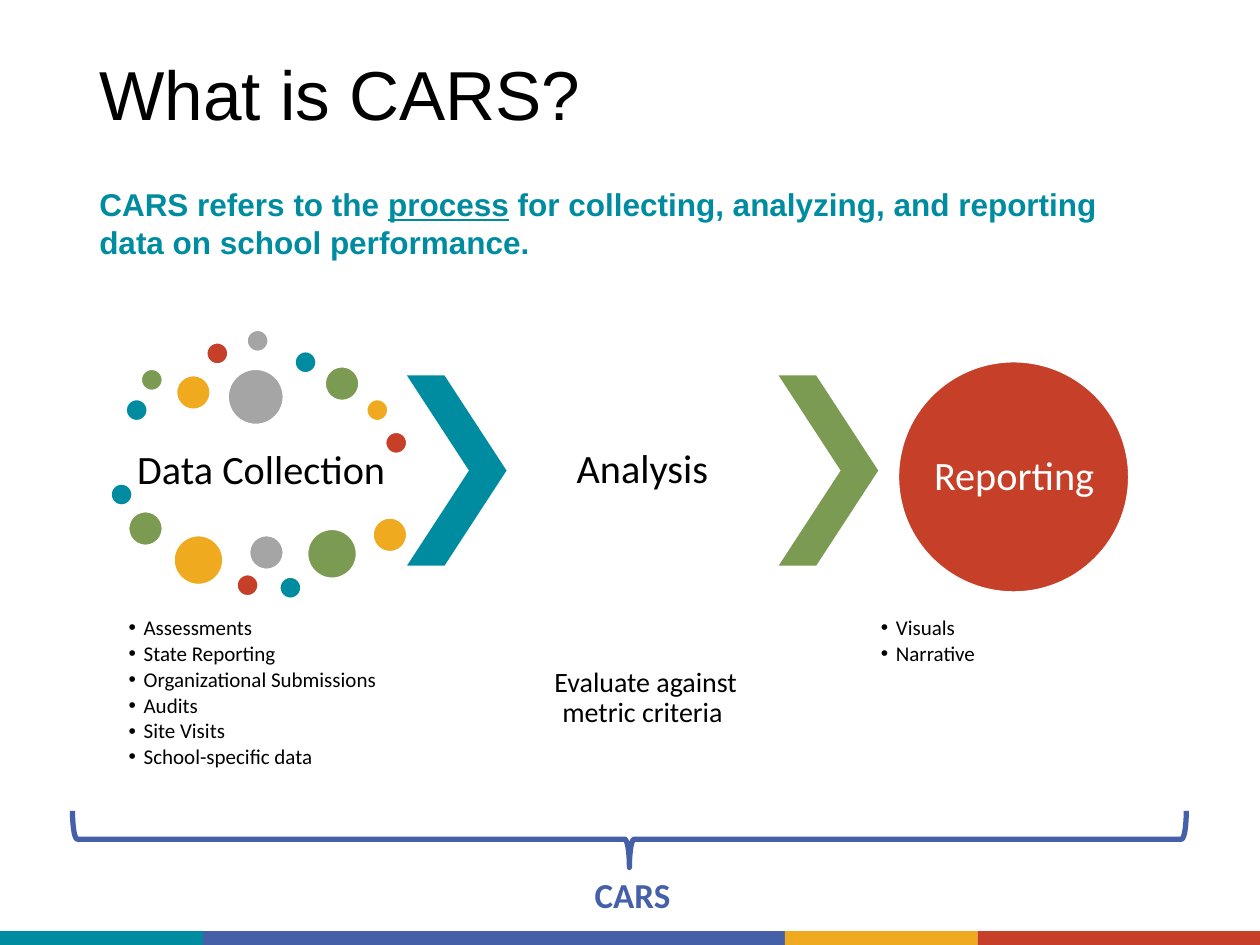
from lxml import etree
from pptx import Presentation
from pptx import util as u
from pptx.dml.color import RGBColor
from pptx.enum import shapes, text
from pptx.oxml import ns

TEAL, BLUE, GOLD, RED = "008CA0", "455FA9", "EFAA1F", "C63F28"
GREEN, GRAY, BLACK, WHITE = "7C9B52", "A5A5A5", "000000", "FFFFFF"
SHAPE, ALIGN, ANCHOR = shapes.MSO_SHAPE, text.PP_ALIGN, text.MSO_ANCHOR


def rgb(value):
    return RGBColor.from_string(value)


def apply(target, values):
    for name, value in values.items():
        setattr(target, name, value)


class SlideBuilder:
    """Hold the shared style and the current slide, and draw each kind of element."""

    centered = {"alignment": ALIGN.CENTER, "line_spacing": 0.9}
    listed = {"level": 1, "alignment": ALIGN.LEFT, "line_spacing": 0.9,
              "space_before": u.Pt(0), "space_after": u.Pt(1.8)}

    def __init__(self, slide):
        self.slide = slide

    def place(self, shape, box):
        names = ("left", "top", "width", "height")
        apply(shape, dict(zip(names, map(u.Inches, box))))

    def frame(self, shape, inset, anchor):
        frame = shape.text_frame
        margins = ("margin_left", "margin_top", "margin_right", "margin_bottom")
        values = dict(zip(margins, map(u.Inches, inset)))
        apply(frame, values | {"word_wrap": True, "vertical_anchor": anchor,
                               "auto_size": text.MSO_AUTO_SIZE.NONE})
        return frame

    def run(self, paragraph, content, size, color, font="Calibri", **values):
        run = paragraph.add_run()
        run.text = content
        apply(run.font, {"name": font, "size": u.Pt(size)} | values)
        run.font.color.rgb = rgb(color)

    def shape(self, kind, box, fill=None, line=None, line_width=1):
        shape = self.slide.shapes.add_shape(kind, *map(u.Inches, box))
        shape.shadow.inherit = False
        if fill:
            shape.fill.solid()
            shape.fill.fore_color.rgb = rgb(fill)
        else:
            shape.fill.background()
        if line:
            shape.line.color.rgb = rgb(line)
            shape.line.width = u.Pt(line_width)
        else:
            shape.line.fill.background()
        return shape

    def title(self, content, box):
        shape = self.slide.shapes.title
        self.place(shape, box)
        paragraph = self.frame(shape, (0.1, 0.05, 0.1, 0.05), ANCHOR.MIDDLE).paragraphs[0]
        apply(paragraph, {"alignment": ALIGN.LEFT, "line_spacing": 0.9})
        self.run(paragraph, content, 39.6, BLACK, "Arial")

    def bullets(self, index, items, box):
        shape = self.slide.placeholders[index]
        self.place(shape, box)
        frame = self.frame(shape, (0.02,) * 4, ANCHOR.TOP)
        for number, item in enumerate(items):
            paragraph = frame.add_paragraph() if number else frame.paragraphs[0]
            apply(paragraph, self.listed)
            properties = paragraph._p.get_or_add_pPr()
            properties.set("marL", str(u.Inches(0.12)))
            properties.set("indent", str(u.Inches(-0.12)))
            color = etree.SubElement(properties, ns.qn("a:buClr"))
            etree.SubElement(color, ns.qn("a:srgbClr"), val=BLACK)
            etree.SubElement(properties, ns.qn("a:buFont"), typeface="Arial")
            etree.SubElement(properties, ns.qn("a:buChar"), char="•")
            self.run(paragraph, item, 12, BLACK)

    def textbox(self, box, runs, size, color, inset=(0.1, 0.05, 0.1, 0.05),
                anchor=ANCHOR.TOP, layout=None, **font):
        shape = self.slide.shapes.add_textbox(*map(u.Inches, box))
        paragraph = self.frame(shape, inset, anchor).paragraphs[0]
        apply(paragraph, layout or {})
        for content, values in runs:
            self.run(paragraph, content, size, color, **(font | values))

    def label(self, content, box, size=23, color=BLACK, inset=0.03):
        self.textbox(box, [(content, {})], size, color, (inset,) * 4,
                     ANCHOR.MIDDLE, self.centered)

    def chevron(self, left, fill):
        chevron = self.shape(SHAPE.CHEVRON, (left, 2.98, 0.79, 1.51), fill)
        chevron.adjustments[0] = 0.623

    def circle(self, left, top, size, fill):
        self.shape(SHAPE.OVAL, (left, top, size, size), fill, WHITE)


SMALL, MEDIUM, LARGE, LARGEST = 0.17, 0.27, 0.39, 0.44
DOTS = [
    (1, 3.17, SMALL, TEAL), (1.12, 2.93, SMALL, GREEN), (1.4, 2.98, MEDIUM, GOLD),
    (1.64, 2.72, SMALL, RED), (1.96, 2.62, SMALL, GRAY), (2.34, 2.79, SMALL, TEAL),
    (2.58, 2.91, MEDIUM, GREEN), (2.91, 3.17, SMALL, GOLD), (3.06, 3.43, SMALL, RED),
    (1.81, 2.93, LARGEST, GRAY), (0.88, 3.84, SMALL, TEAL), (1.02, 4.06, MEDIUM, GREEN),
    (1.38, 4.25, LARGE, GOLD), (1.88, 4.56, SMALL, RED), (1.98, 4.25, MEDIUM, GRAY),
    (2.22, 4.58, SMALL, TEAL), (2.44, 4.2, LARGE, GREEN), (2.96, 4.11, MEDIUM, GOLD),
]
COLLECTED = ["Assessments", "State Reporting", "Organizational Submissions",
             "Audits", "Site Visits", "School-specific data"]


def main():
    presentation = Presentation()
    apply(presentation, {"slide_width": u.Inches(10), "slide_height": u.Inches(7.5)})
    builder = SlideBuilder(presentation.slides.add_slide(presentation.slide_layouts[3]))

    left = 0
    for width, color in ((1.61, TEAL), (4.62, BLUE), (1.53, GOLD), (2.24, RED)):
        builder.shape(SHAPE.RECTANGLE, (left, 7.39, width, 0.11), color)
        left += width

    builder.title("What is CARS?", (0.69, 0.4, 8.62, 0.75))
    definition = [("CARS refers to the ", {}), ("process", {"underline": True}),
                  (" for collecting, analyzing, and reporting data on school performance.", {})]
    builder.textbox((0.69, 1.42, 8.46, 0.71), definition, 18, TEAL, font="Arial", bold=True)

    builder.label("Data Collection", (1, 3.39, 2.15, 0.71))
    builder.bullets(1, COLLECTED, (1, 4.88, 2.15, 1.33))
    for dot in DOTS:
        builder.circle(*dot)

    builder.chevron(3.23, TEAL)
    builder.label("Analysis", (4.02, 2.98, 2.16, 1.51))
    builder.label(" Evaluate against metric criteria", (4.02, 4.88, 2.16, 1.33), 16, inset=0.02)

    builder.chevron(6.18, GREEN)
    builder.circle(7.13, 2.87, 1.83, RED)
    builder.label("Reporting", (7.4, 3.14, 1.3, 1.3), color=WHITE, inset=0)
    builder.bullets(2, ["Visuals", "Narrative"], (6.97, 4.88, 2.16, 1.33))

    brace = builder.shape(SHAPE.RIGHT_BRACE, (4.77, 2.24, 0.45, 8.84), line=BLUE, line_width=3)
    brace.rotation = 90
    builder.textbox((3.91, 6.88, 2.22, 0.44), [("CARS", {})], 20, BLUE,
                    layout={"alignment": ALIGN.CENTER}, bold=True)
    presentation.save("out.pptx")


if __name__ == "__main__":
    main()
